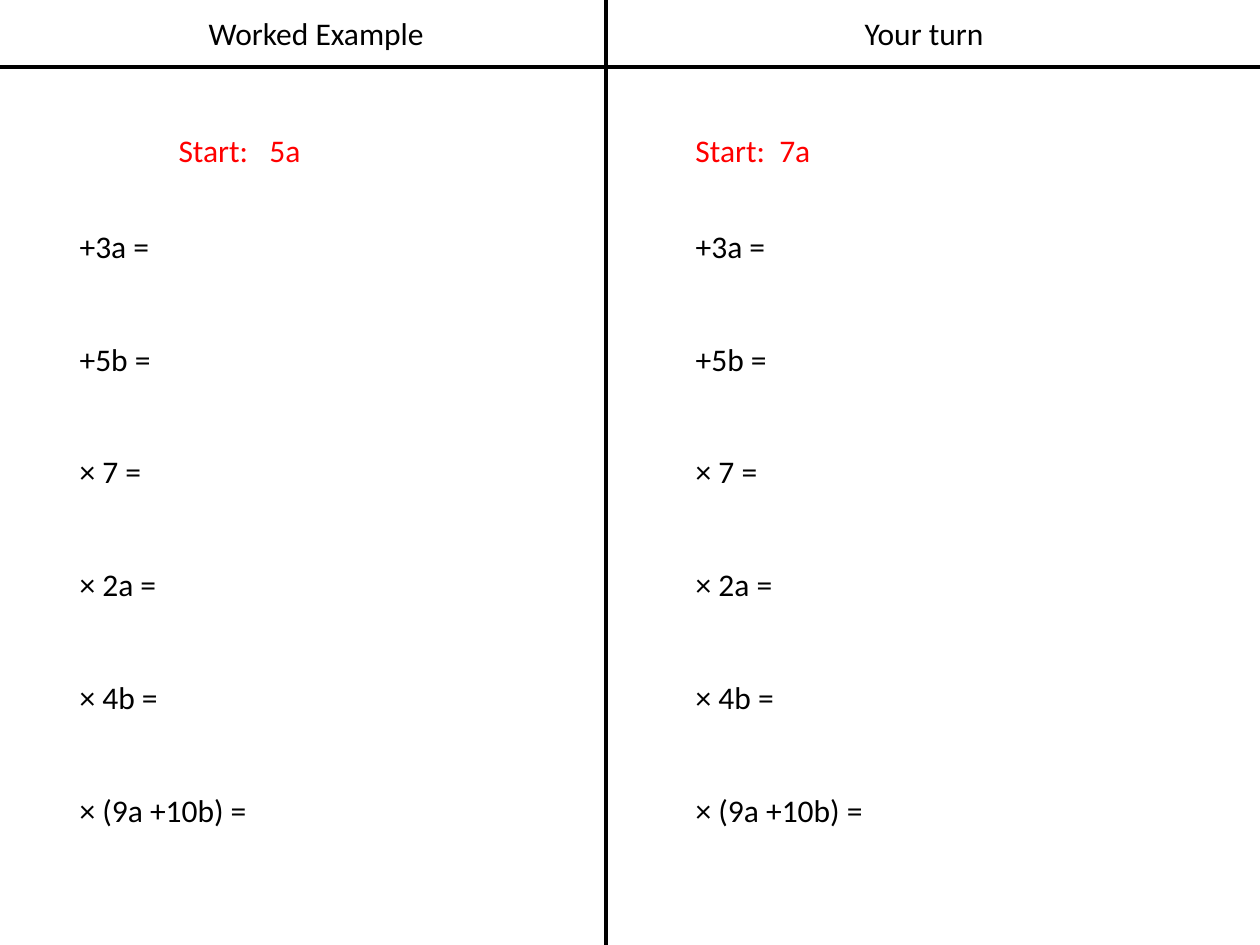
from pptx import Presentation, util as u
from pptx.dml import color
from pptx.enum import shapes, text
from pptx.oxml import ns
from lxml import etree

WIDE, HIGH = 25.4, 19.05
SPLIT, RULE = 12.22, 1.35
BLACK, RED = "000000", "FF0000"
STEPS = ["+3a =", "+5b =", "× 7 =", "× 2a =", "× 4b =", "× (9a +10b) ="]


def paint(value):
    return color.RGBColor.from_string(value)


def write(shape, box, lines, ink=BLACK, align=text.PP_ALIGN.LEFT, gap=0):
    shape.left, shape.top, shape.width, shape.height = map(u.Cm, box)
    frame = shape.text_frame
    frame.word_wrap = True
    frame.auto_size = text.MSO_AUTO_SIZE.NONE
    frame.vertical_anchor = text.MSO_ANCHOR.TOP
    frame.text = "\n".join(lines)
    for para in frame.paragraphs:
        para.alignment = align
        para.space_before = u.Pt(0)
        para.space_after = u.Pt(gap)
        font = para.font
        font.name, font.size, font.bold = "Calibri", u.Pt(18), False
        font.color.rgb = paint(ink)
        props = para._p.get_or_add_pPr()
        props.set("marL", "0")
        props.set("indent", "0")
        mark = etree.Element(ns.qn("a:buNone"))
        props.insert_element_before(mark, "a:tabLst", "a:defRPr", "a:extLst")


def column(slide, left, head, body, title, start, place):
    head_x, head_w, start_x, list_x = place
    write(head, (left + head_x, 0.15, head_w, 1.02), [title],
          align=text.PP_ALIGN.CENTER)
    label = slide.shapes.add_textbox(0, 0, 0, 0)
    write(label, (left + start_x, 2.51, 5.77, 1.8), [start], ink=RED)
    write(body, (left + list_x, 4.45, 7.77, 13.26), STEPS, gap=42.8)


def rule(slide, *ends):
    line = slide.shapes.add_connector(
        shapes.MSO_CONNECTOR.STRAIGHT, *map(u.Cm, ends))
    line.line.color.rgb = paint(BLACK)
    line.line.width = u.Pt(2.5)
    etree.SubElement(line._element.spPr, ns.qn("a:effectLst"))


def main():
    deck = Presentation()
    deck.slide_width, deck.slide_height = u.Cm(WIDE), u.Cm(HIGH)
    slide = deck.slides.add_slide(deck.slide_layouts.get_by_name("Comparison"))
    title, *slots = slide.placeholders
    title._element.getparent().remove(title._element)
    column(slide, 0, *slots[:2], "Worked Example", "Start:   5a",
           (2.87, 7.01, 3.35, 1.35))
    column(slide, SPLIT, *slots[2:4], "Your turn", "Start:  7a",
           (3.96, 4.9, 1.55, 1.55))
    rule(slide, SPLIT, 0, SPLIT, HIGH)
    rule(slide, 0, RULE, WIDE, RULE)
    deck.save("out.pptx")


if __name__ == "__main__":
    main()
